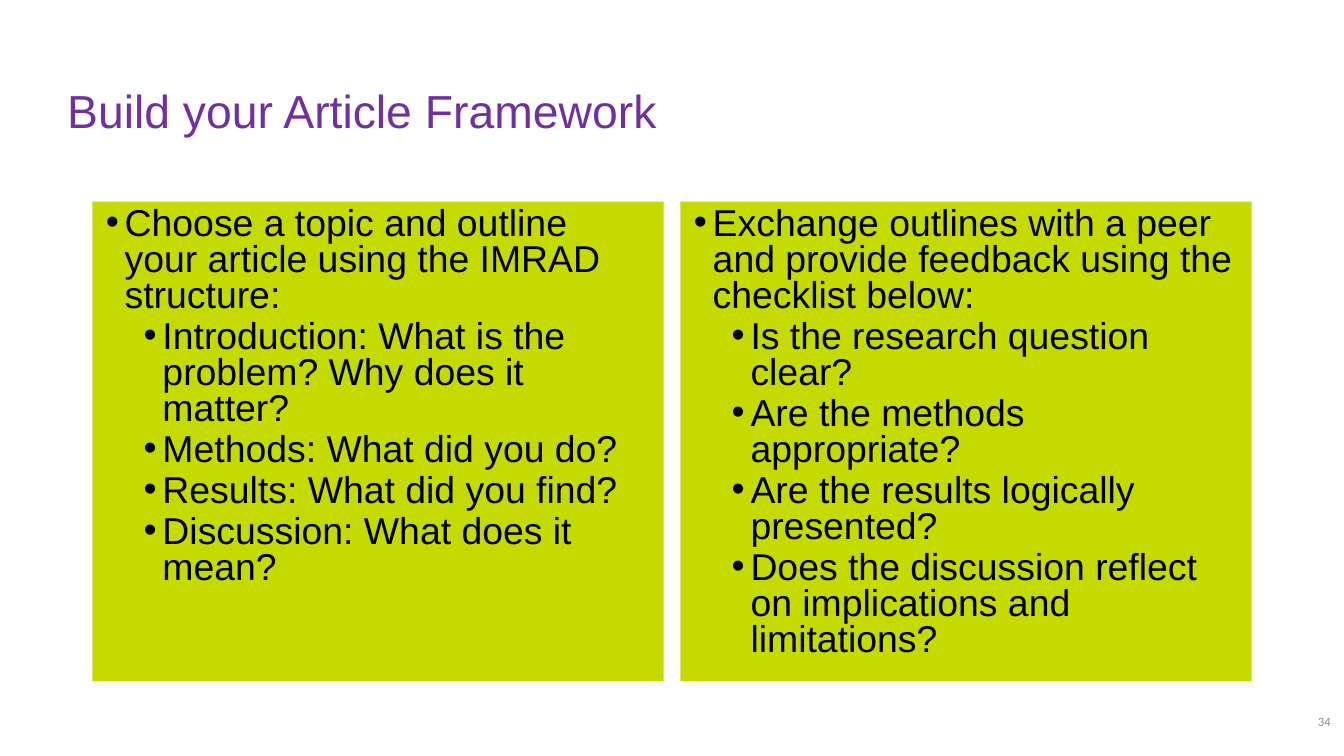
"""Build the article framework slide with two checklist panels."""
from lxml import etree
from pptx import Presentation
from pptx.dml.color import RGBColor
from pptx.enum.text import MSO_ANCHOR as ANCHOR, MSO_AUTO_SIZE as AUTO, PP_ALIGN as ALIGN
from pptx.oxml.ns import qn
from pptx.util import Pt

LEFT = [
    "Choose a topic and outline your article using the IMRAD structure:",
    "Introduction: What is the problem? Why does it matter?",
    "Methods: What did you do?",
    "Results: What did you find?",
    "Discussion: What does it mean?",
]
RIGHT = [
    "Exchange outlines with a peer and provide feedback using the checklist below:",
    "Is the research question clear?",
    "Are the methods appropriate?",
    "Are the results logically presented?",
    "Does the discussion reflect on implications and limitations?",
]


def rgb(color):
    return RGBColor.from_string(color)


def write(p, text, size=20, font="Arial", color="000000", align=ALIGN.LEFT, spacing=1.0, before=0):
    p.alignment = align
    p.line_spacing = spacing
    p.space_before = Pt(before)
    r = p.add_run()
    r.text = text
    r.font.size = Pt(size)
    r.font.name = font
    r.font.color.rgb = rgb(color)


def bullet(p, margin, hanging):
    pPr = p._p.get_or_add_pPr()
    pPr.set("marL", str(Pt(margin)))
    pPr.set("indent", str(-Pt(hanging)))
    etree.SubElement(pPr, qn("a:buFont")).set("typeface", "Arial")
    etree.SubElement(pPr, qn("a:buChar")).set("char", "•")


class Deck:
    accent, panel, muted = "7030A0", "C4DA00", "8C8C8C"
    hanging, step = 10.12, 20.25

    def __init__(self, width, height):
        self.prs = Presentation()
        self.prs.slide_width, self.prs.slide_height = Pt(width), Pt(height)
        self.s = self.prs.slides.add_slide(self.prs.slide_layouts[3])

    def place(self, sp, x, y, w, h, anchor):
        sp.left, sp.top, sp.width, sp.height = Pt(x), Pt(y), Pt(w), Pt(h)
        tf = sp.text_frame
        tf.word_wrap = True
        tf.auto_size = AUTO.NONE
        tf.vertical_anchor = anchor
        return tf

    def title(self, text, *box):
        tf = self.place(self.s.shapes.title, *box, ANCHOR.MIDDLE)
        write(tf.paragraphs[0], text, size=24.8, color=self.accent, spacing=0.9)

    def checklist(self, idx, items, *box):
        sp = self.s.placeholders[idx]
        sp.fill.solid()
        sp.fill.fore_color.rgb = rgb(self.panel)
        tf = self.place(sp, *box, ANCHOR.TOP)
        for i, text in enumerate(items):
            p = tf.paragraphs[0] if i == 0 else tf.add_paragraph()
            p.level = min(i, 1)
            bullet(p, self.hanging + p.level * self.step, self.hanging)
            write(p, text, spacing=0.8, before=2.8 * p.level)

    def number(self, text, *box):
        sp = self.s.shapes.add_textbox(0, 0, 0, 0)
        tf = self.place(sp, *box, ANCHOR.MIDDLE)
        write(tf.paragraphs[0], text, size=6.8, font="Calibri", color=self.muted, align=ALIGN.RIGHT)


def main():
    deck = Deck(720, 405)
    deck.title("Build your Article Framework", 28.8, 21.6, 572.4, 78.5)
    x, width, gap = 49.5, 306, 9
    for i, items in enumerate((LEFT, RIGHT)):
        deck.checklist(i + 1, items, x + i * (width + gap), 108, width, 257)
    deck.number("34", 558, 375.5, 162, 21.6)
    deck.prs.save("out.pptx")


if __name__ == "__main__":
    main()
